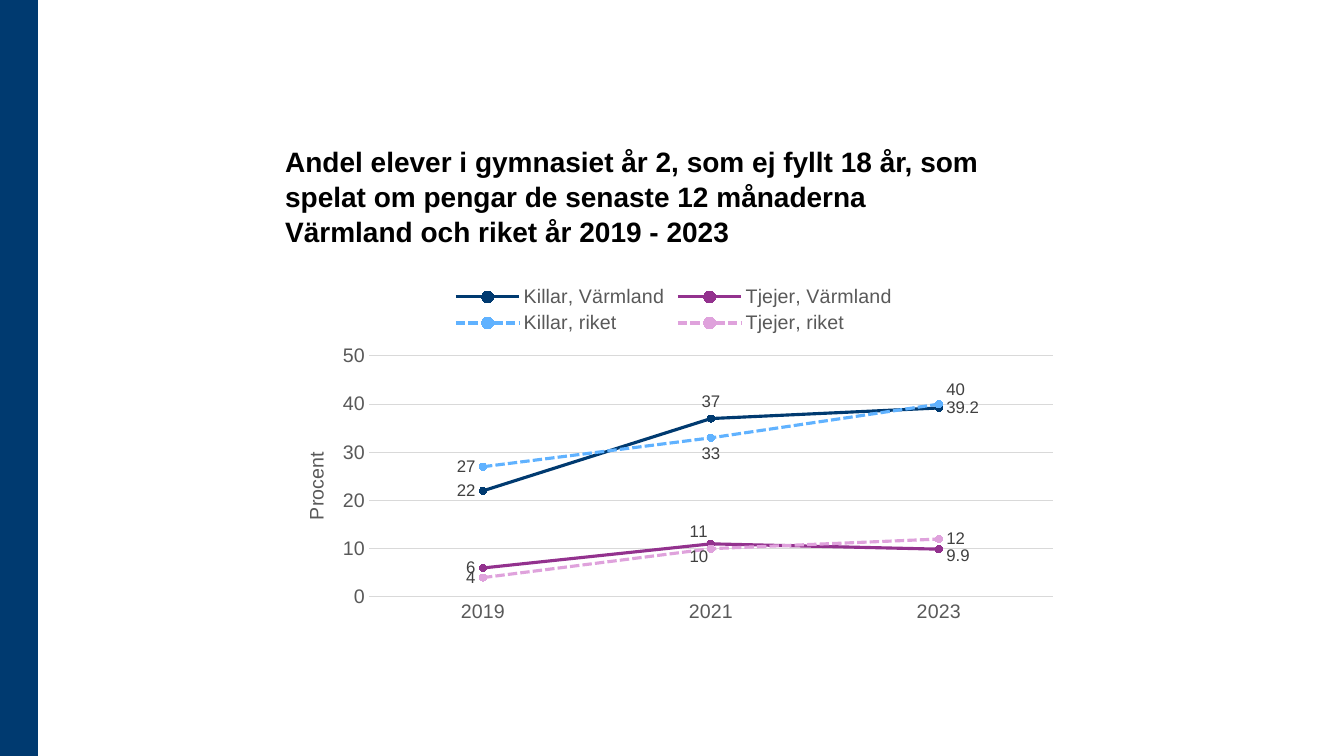
from dataclasses import dataclass, field
from typing import NamedTuple

from lxml import etree
from pptx import Presentation
from pptx import util as u
from pptx.chart.data import CategoryChartData
from pptx.dml.color import RGBColor
from pptx.enum import chart as ch
from pptx.enum import dml, shapes, text
from pptx.oxml import ns

EMU_PER_PX = 914400 / 100.8
POS = ch.XL_LABEL_POSITION


def px(n: int) -> u.Emu:
    return u.Emu(round(n * EMU_PER_PX))


@dataclass(frozen=True)
class Theme:
    font: str = "Arial"
    navy: str = "003A70"
    purple: str = "93328E"
    sky: str = "60B2FF"
    pink: str = "DFA2DC"
    black: str = "000000"
    axis_text: str = "595959"
    label_text: str = "404040"
    grid: str = "D9D9D9"
    title_size: int = 20
    axis_size: int = 14
    label_size: int = 12


class Box(NamedTuple):
    x: int
    y: int
    w: int
    h: int

    def emu(self) -> list[u.Emu]:
        return [px(n) for n in self]


class Label(NamedTuple):
    point: int
    position: POS
    dx: int = 0
    dy: int = 0


@dataclass(frozen=True)
class Line:
    name: str
    values: tuple[float, ...]
    color: str
    dashed: bool = False
    labels: list[Label] = field(default_factory=list)


THEME = Theme()
SLIDE = Box(0, 0, 1344, 756)
SIDE_BAR = Box(0, 0, 38, 756)
TITLE = Box(275, 107, 793, 146)
CHART = Box(275, 274, 793, 357)
PLOT = Box(94, 82, 684, 241)
LEGEND = Box(174, 8, 450, 56)
YEARS = ("2019", "2021", "2023")
LINES = [
    Line("Killar, Värmland", (22, 37, 39.2), THEME.navy,
         labels=[Label(1, POS.ABOVE), Label(2, POS.RIGHT)]),
    Line("Tjejer, Värmland", (6, 11, 9.9), THEME.purple,
         labels=[Label(1, POS.ABOVE, -12, 4), Label(2, POS.RIGHT, 0, 7)]),
    Line("Killar, riket", (27, 33, 40), THEME.sky, True,
         [Label(1, POS.BELOW), Label(2, POS.RIGHT, 0, -14)]),
    Line("Tjejer, riket", (4, 10, 12), THEME.pink, True,
         [Label(1, POS.BELOW, -12, -8), Label(2, POS.RIGHT)]),
]


def rgb(color: str) -> RGBColor:
    return RGBColor.from_string(color)


def style_font(font, size: int, color: str, bold: bool = False) -> None:
    font.name = THEME.font
    font.size = u.Pt(size)
    font.bold = bold
    font.color.rgb = rgb(color)


def style_line(line, color: str, width: float) -> None:
    line.color.rgb = rgb(color)
    line.width = u.Pt(width)


def place(element, after: str, **values: str | int) -> None:
    for old in element.findall(ns.qn("c:layout")):
        element.remove(old)
    layout = etree.Element(ns.qn("c:layout"))
    manual = etree.SubElement(layout, ns.qn("c:manualLayout"))
    for tag, value in values.items():
        if isinstance(value, int):
            value = f"{value / (CHART.w if tag in 'xw' else CHART.h):.4f}"
        etree.SubElement(manual, ns.qn(f"c:{tag}")).set("val", value)
    anchor = element.find(ns.qn(after)) if after else None
    if anchor is None:
        element.insert(0, layout)
    else:
        anchor.addnext(layout)


def style_series(series, line: Line) -> None:
    series.smooth = False
    style_line(series.format.line, line.color, 2.25)
    if line.dashed:
        series.format.line.dash_style = dml.MSO_LINE.SQUARE_DOT
        series.format.line._ln.prstDash.set("val", "sysDash")
    marker = series.marker
    marker.style = ch.XL_MARKER_STYLE.CIRCLE
    marker.size = 5
    marker.format.fill.solid()
    marker.format.fill.fore_color.rgb = rgb(line.color)
    style_line(marker.format.line, line.color, 0.75)
    labels = series.data_labels
    labels.show_value = True
    labels.position = POS.LEFT
    style_font(labels.font, THEME.label_size, THEME.label_text)
    for label in line.labels:
        data_label = series.points[label.point].data_label
        style_font(data_label.font, THEME.label_size, THEME.label_text)
        data_label.position = label.position
        if label.dx or label.dy:
            node = series._element.xpath(f"c:dLbls/c:dLbl[c:idx/@val='{label.point}']")[0]
            place(node, "c:idx", x=label.dx, y=label.dy)


def style_axes(chart) -> None:
    for axis in (chart.category_axis, chart.value_axis):
        axis.major_tick_mark = ch.XL_TICK_MARK.NONE
        axis.minor_tick_mark = ch.XL_TICK_MARK.NONE
        style_font(axis.tick_labels.font, THEME.axis_size, THEME.axis_text)
    style_line(chart.category_axis.format.line, THEME.grid, 0.75)
    axis = chart.value_axis
    axis.minimum_scale, axis.maximum_scale, axis.major_unit = 0, 50, 10
    axis.format.line.fill.background()
    style_line(axis.major_gridlines.format.line, THEME.grid, 0.75)
    p = axis.axis_title.text_frame.paragraphs[0]
    p.text = "Procent"
    style_font(p.font, THEME.axis_size, THEME.axis_text)
    body = axis.axis_title.text_frame._txBody.bodyPr
    body.set("rot", "-5400000")
    body.set("vert", "horz")
    place(axis.axis_title._element, "c:tx", xMode="edge", yMode="edge", x=25, y=174)


def add_line_chart(s) -> None:
    data = CategoryChartData()
    data.categories = YEARS
    for line in LINES:
        data.add_series(line.name, line.values)
    chart = s.shapes.add_chart(ch.XL_CHART_TYPE.LINE_MARKERS, *CHART.emu(), data).chart
    style_font(chart.font, THEME.axis_size, THEME.black)
    chart.has_title = False
    chart.plots[0].vary_by_categories = False
    chart.has_legend = True
    chart.legend.position = ch.XL_LEGEND_POSITION.TOP
    chart.legend.include_in_layout = False
    style_font(chart.legend.font, THEME.axis_size, THEME.axis_text)
    place(chart.legend._element, "c:legendPos", xMode="edge", yMode="edge", **LEGEND._asdict())
    plot_area = chart._chartSpace.chart.plotArea
    place(plot_area, "", layoutTarget="inner", xMode="edge", yMode="edge", **PLOT._asdict())
    style_axes(chart)
    for series, line in zip(chart.plots[0].series, LINES):
        style_series(series, line)


def add_side_bar(s) -> None:
    sp = s.shapes.add_shape(shapes.MSO_SHAPE.RECTANGLE, *SIDE_BAR.emu())
    sp.shadow.inherit = False
    sp.fill.solid()
    sp.fill.fore_color.rgb = rgb(THEME.navy)
    sp.line.fill.background()


def set_title(s) -> None:
    sp = s.shapes.title
    sp.left, sp.top, sp.width, sp.height = TITLE.emu()
    tf = sp.text_frame
    tf.word_wrap = True
    tf.vertical_anchor = text.MSO_ANCHOR.BOTTOM
    p = tf.paragraphs[0]
    p.text = ("Andel elever i gymnasiet år 2, som ej fyllt 18 år, som spelat om pengar "
              "de senaste 12 månaderna\vVärmland och riket år 2019 - 2023")
    p.alignment = text.PP_ALIGN.LEFT
    p.line_spacing = 1.04
    style_font(p.font, THEME.title_size, THEME.black, bold=True)


def main() -> None:
    prs = Presentation()
    prs.slide_width, prs.slide_height = px(SLIDE.w), px(SLIDE.h)
    s = prs.slides.add_slide(prs.slide_layouts[5])
    add_side_bar(s)
    set_title(s)
    add_line_chart(s)
    prs.save("out.pptx")


if __name__ == "__main__":
    main()
